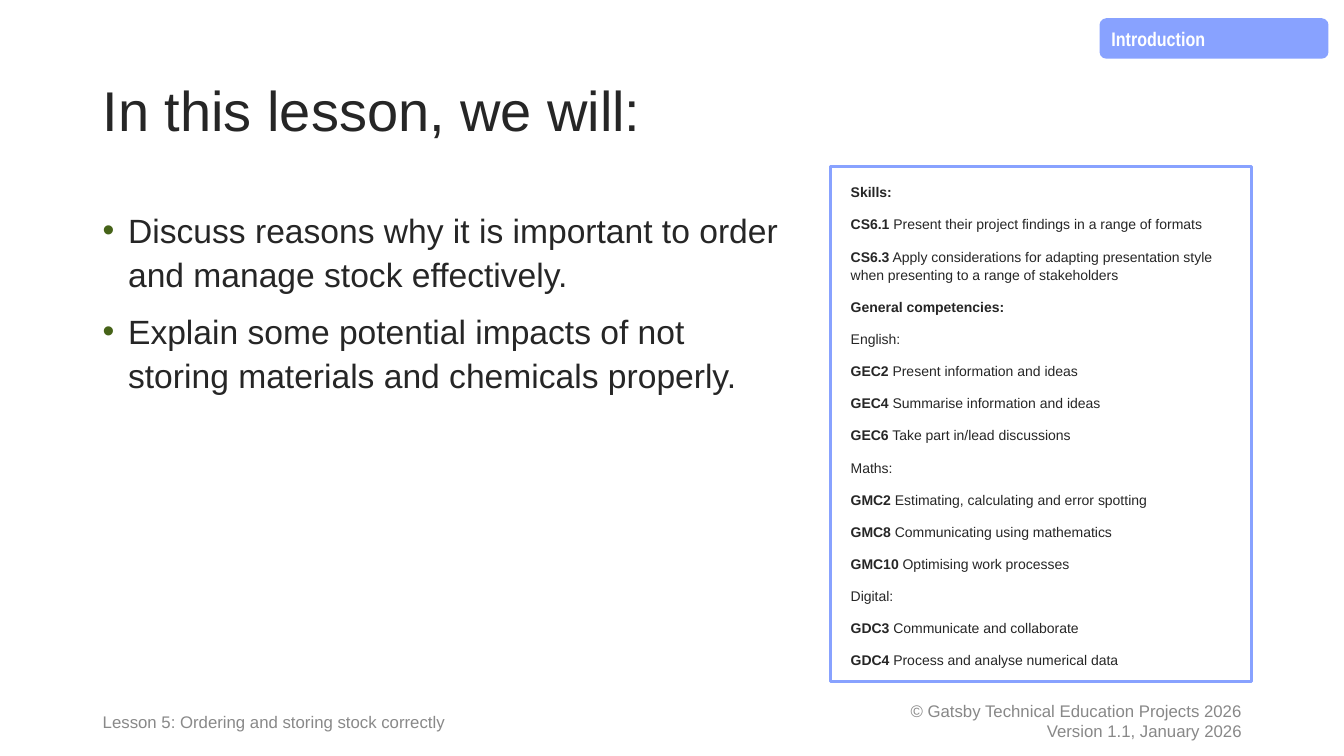
from lxml import etree
from pptx import Presentation
from pptx import util as u
from pptx.dml.color import RGBColor
from pptx.enum import shapes, text
from pptx.oxml.ns import qn

INK, BLUE, GREEN, WHITE = "262626", "88A2FF", "466318", "FFFFFF"


def color(hue):
    return RGBColor.from_string(hue)


class Page:
    font = "Arial"

    def __init__(self, deck):
        self.slide = deck.slides.add_slide(deck.slide_layouts[5])

    def fill_text(self, shape, paras, size, ink=INK, font=None, gap=0,
                  line=1.08, align=text.PP_ALIGN.LEFT,
                  anchor=text.MSO_ANCHOR.TOP, pad=(0.25, 0.13), bullet=None):
        """Each paragraph is a pair: bold part, plain part."""
        frame = shape.text_frame
        frame.word_wrap = True
        frame.auto_size = text.MSO_AUTO_SIZE.NONE
        frame.vertical_anchor = anchor
        frame.margin_left = frame.margin_right = u.Cm(pad[0])
        frame.margin_top = frame.margin_bottom = u.Cm(pad[1])
        for i, parts in enumerate(paras):
            para = frame.add_paragraph() if i else frame.paragraphs[0]
            para.alignment = align
            para.line_spacing = line
            para.space_before = u.Pt(gap if i else 0)
            if bullet:
                self.mark(para, bullet)
            for bold, part in zip((True, False), parts):
                if part:
                    run = para.add_run()
                    run.text = part
                    run.font.name = font or self.font
                    run.font.size = u.Pt(size)
                    run.font.bold = bold
                    run.font.color.rgb = color(ink)

    def mark(self, para, ink):
        props = para._p.get_or_add_pPr()
        props.set("marL", str(u.Cm(0.64)))
        props.set("indent", str(-u.Cm(0.64)))
        tint = etree.SubElement(props, qn("a:buClr"))
        etree.SubElement(tint, qn("a:srgbClr"), val=ink)
        etree.SubElement(props, qn("a:buFont"), typeface="Arial")
        etree.SubElement(props, qn("a:buChar"), char="•")

    def title(self, place, words):
        shape = self.slide.shapes.title
        shape.left, shape.top, shape.width, shape.height = map(u.Cm, place)
        self.fill_text(shape, [("", words)], 40, line=0.9,
                       anchor=text.MSO_ANCHOR.MIDDLE)

    def label(self, place, paras, size, **style):
        shape = self.slide.shapes.add_textbox(*map(u.Cm, place))
        self.fill_text(shape, paras, size, **style)

    def panel(self, kind, place, fill, paras, size, edge=None, **style):
        shape = self.slide.shapes.add_shape(kind, *map(u.Cm, place))
        shape.shadow.inherit = False
        shape.fill.solid()
        shape.fill.fore_color.rgb = color(fill)
        if edge:
            shape.line.color.rgb = color(edge)
            shape.line.width = u.Pt(2.25)
        else:
            shape.line.fill.background()
        self.fill_text(shape, paras, size, **style)


def main():
    deck = Presentation()
    deck.slide_width, deck.slide_height = u.Cm(33.87), u.Cm(19.05)
    page = Page(deck)
    kinds = shapes.MSO_SHAPE

    # Section tag and title
    page.panel(kinds.FLOWCHART_ALTERNATE_PROCESS, (27.71, 0.46, 5.77, 1.02),
               BLUE, [("Introduction", "")], 14, ink=WHITE,
               font="Arial Narrow")
    page.title((2.34, 1.02, 29.21, 3.68), "In this lesson, we will:")

    # Aims
    aims = [
        ("", "Discuss reasons why it is important to order and manage stock "
             "effectively."),
        ("", "Explain some potential impacts of not storing materials and "
             "chemicals properly."),
    ]
    page.label((2.34, 5.08, 17.78, 12.09), aims, 24, gap=10, bullet=GREEN)

    # Skills panel
    skills = [
        ("Skills:", ""),
        ("CS6.1", " Present their project findings in a range of formats"),
        ("CS6.3", " Apply considerations for adapting presentation style "
                  "when presenting to a range of stakeholders"),
        ("General competencies:", ""),
        ("", "English:"),
        ("GEC2", " Present information and ideas"),
        ("GEC4", " Summarise information and ideas"),
        ("GEC6", " Take part in/lead discussions"),
        ("", "Maths:"),
        ("GMC2", " Estimating, calculating and error spotting"),
        ("GMC8", " Communicating using mathematics"),
        ("GMC10", " Optimising work processes"),
        ("", "Digital:"),
        ("GDC3", " Communicate and collaborate"),
        ("GDC4", " Process and analyse numerical data"),
    ]
    page.panel(kinds.RECTANGLE, (20.93, 4.19, 10.62, 12.98), WHITE, skills,
               10, edge=BLUE, gap=10, pad=(0.51, 0.41))

    # Footer
    page.label((2.34, 17.65, 11.68, 1.02),
               [("", "Lesson 5: Ordering and storing stock correctly")], 12,
               ink="898989", anchor=text.MSO_ANCHOR.MIDDLE)
    page.label((20.12, 17.65, 11.43, 1.02),
               [("", "© Gatsby Technical Education Projects 2026"),
                ("", "Version 1.1, January 2026")], 12, ink="888888", line=1.0,
               align=text.PP_ALIGN.RIGHT, anchor=text.MSO_ANCHOR.MIDDLE)

    deck.save("out.pptx")


if __name__ == "__main__":
    main()
